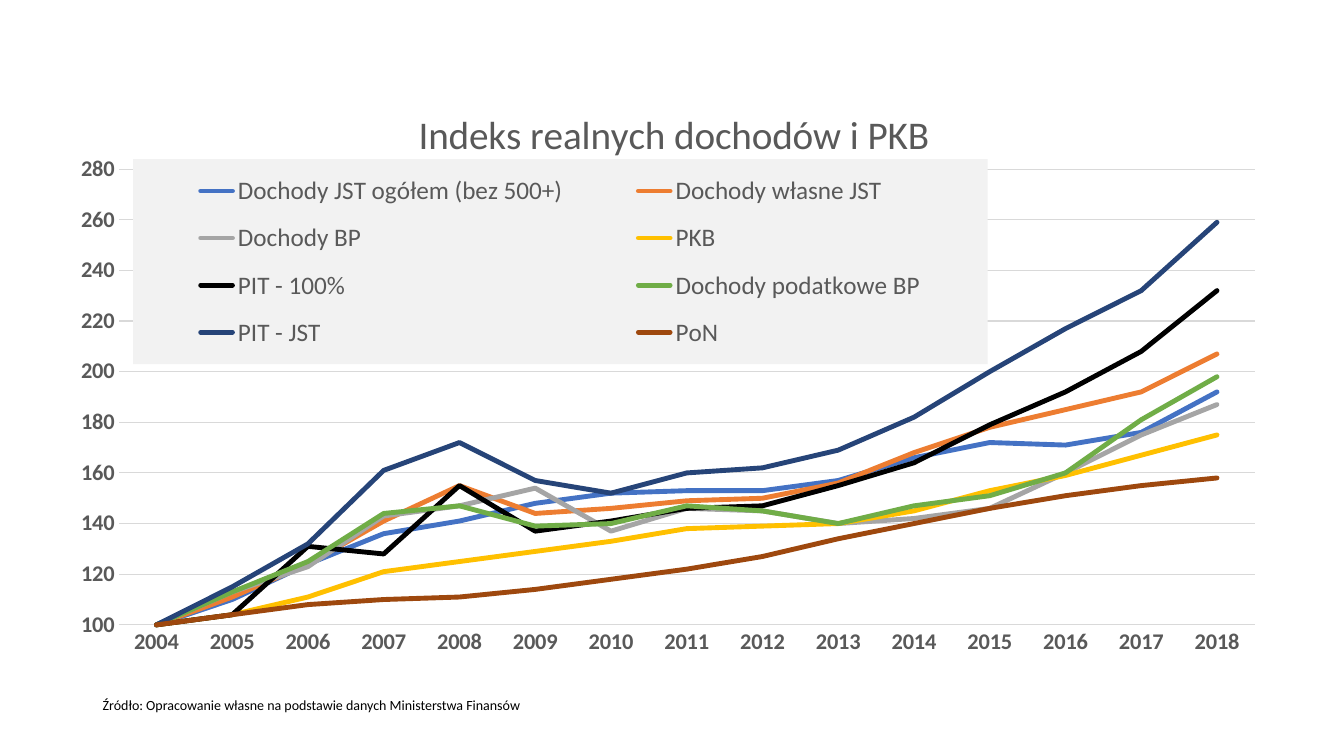
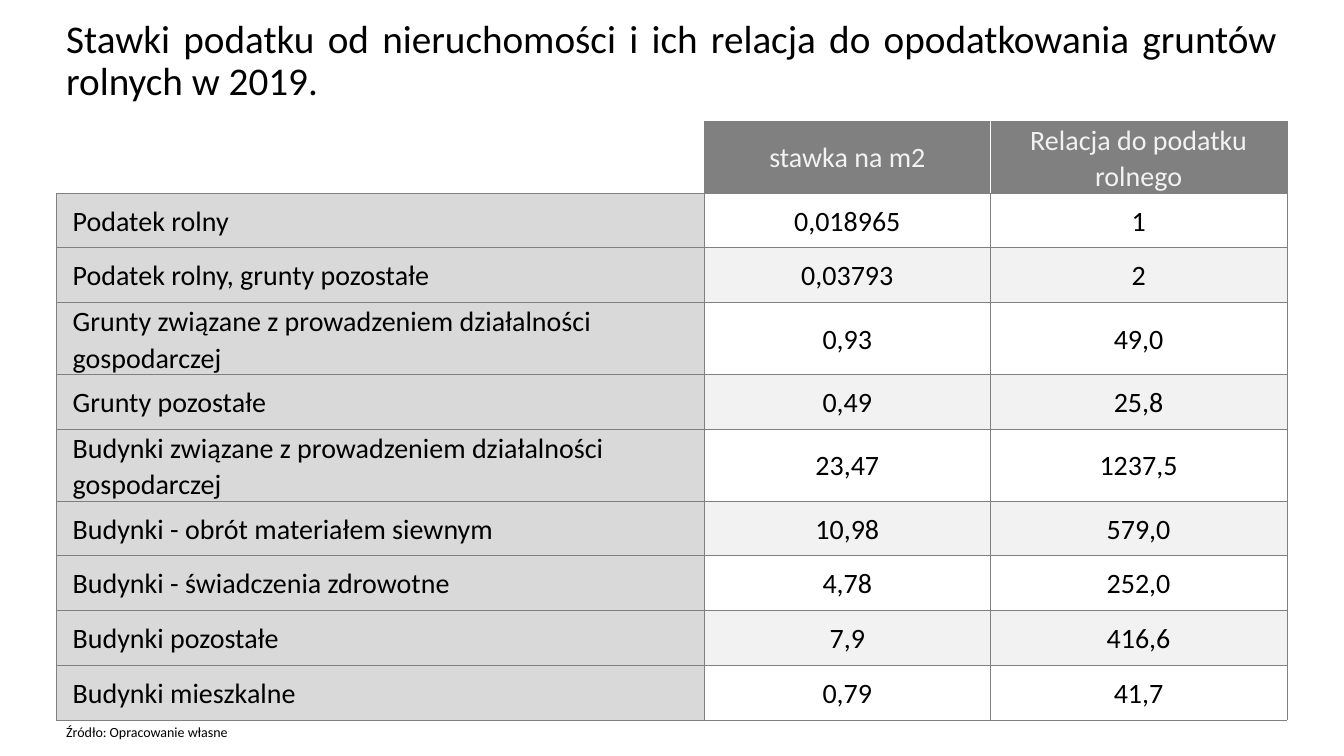
import lxml.etree
import pptx
import pptx.chart.data
import pptx.dml.color
import pptx.enum.chart
import pptx.enum.text
import pptx.oxml
import pptx.oxml.ns
import pptx.util

Cm = pptx.util.Cm
Pt = pptx.util.Pt
RGBColor = pptx.dml.color.RGBColor
PP_ALIGN = pptx.enum.text.PP_ALIGN
qn = pptx.oxml.ns.qn

# Shared style
FONT = "Calibri"
BLACK = RGBColor(0x00, 0x00, 0x00)
WHITE = RGBColor(0xFF, 0xFF, 0xFF)
TEXT_GREY = RGBColor(0x59, 0x59, 0x59)
DARK_GREY = RGBColor(0x80, 0x80, 0x80)
MID_GREY = RGBColor(0xD9, 0xD9, 0xD9)
LIGHT_GREY = RGBColor(0xF2, 0xF2, 0xF2)
BLUE = RGBColor(0x44, 0x72, 0xC4)
ORANGE = RGBColor(0xED, 0x7D, 0x31)
SILVER = RGBColor(0xA5, 0xA5, 0xA5)
YELLOW = RGBColor(0xFF, 0xC0, 0x00)
GREEN = RGBColor(0x70, 0xAD, 0x47)
NAVY = RGBColor(0x26, 0x44, 0x78)
BROWN = RGBColor(0x9E, 0x48, 0x0E)
TITLE_SIZE = Pt(28)
SOURCE_SIZE = Pt(10)


def add_text(slide, text, left, top, width, height, size):
    box = slide.shapes.add_textbox(Cm(left), Cm(top), Cm(width), Cm(height))
    box.text_frame.word_wrap = True
    box.text_frame.auto_size = pptx.enum.text.MSO_AUTO_SIZE.SHAPE_TO_FIT_TEXT
    paragraph = box.text_frame.paragraphs[0]
    paragraph.text = text
    style_font(paragraph.runs[0].font, size, BLACK)
    return paragraph


def style_font(font, size, color, bold=False):
    font.name = FONT
    font.size = size
    font.bold = bold
    font.color.rgb = color


presentation = pptx.Presentation()
presentation.slide_width = Cm(33.87)
presentation.slide_height = Cm(19.05)
blank_layout = presentation.slide_layouts[6]

# Slide 1: line chart of income and GDP indices
slide = presentation.slides.add_slide(blank_layout)
index_series = [
    ("Dochody JST ogółem (bez 500+)", BLUE,
     [100, 110, 124, 136, 141, 148, 152, 153, 153, 157, 166, 172, 171, 176, 192]),
    ("Dochody własne JST", ORANGE,
     [100, 111, 124, 141, 155, 144, 146, 149, 150, 156, 168, 178, 185, 192, 207]),
    ("Dochody BP", SILVER,
     [100, 113, 123, 143, 147, 154, 137, 146, 145, 140, 142, 146, 160, 175, 187]),
    ("PKB", YELLOW,
     [100, 104, 111, 121, 125, 129, 133, 138, 139, 140, 145, 153, 159, 167, 175]),
    ("PIT - 100%", BLACK,
     [100, 104, 131, 128, 155, 137, 141, 146, 147, 155, 164, 179, 192, 208, 232]),
    ("Dochody podatkowe BP", GREEN,
     [100, 113, 125, 144, 147, 139, 140, 147, 145, 140, 147, 151, 160, 181, 198]),
    ("PIT - JST", NAVY,
     [100, 115, 132, 161, 172, 157, 152, 160, 162, 169, 182, 200, 217, 232, 259]),
    ("PoN", BROWN,
     [100, 104, 108, 110, 111, 114, 118, 122, 127, 134, 140, 146, 151, 155, 158]),
]
chart_data = pptx.chart.data.CategoryChartData(number_format="0")
chart_data.categories = [str(year) for year in range(2004, 2019)]
for name, color, values in index_series:
    chart_data.add_series(name, values)
chart = slide.shapes.add_chart(
    pptx.enum.chart.XL_CHART_TYPE.LINE,
    Cm(1.45), Cm(1.93), Cm(30.76), Cm(15.65), chart_data).chart
style_font(chart.font, Pt(10), BLACK)

# Series lines
chart.plots[0].vary_by_categories = False
for series, (name, color, values) in zip(chart.plots[0].series, index_series):
    series.smooth = False
    series.format.line.color.rgb = color
    series.format.line.width = Pt(3.5)
    series.format.line.fill.solid()
    series.format.line.color.rgb = color
    for line in series._element.iter(qn("a:ln")):
        line.set("cap", "rnd")

# Axes
for axis in (chart.category_axis, chart.value_axis):
    axis.major_tick_mark = pptx.enum.chart.XL_TICK_MARK.NONE
    axis.minor_tick_mark = pptx.enum.chart.XL_TICK_MARK.NONE
    style_font(axis.tick_labels.font, Pt(16), TEXT_GREY, bold=True)
value_axis = chart.value_axis
value_axis.minimum_scale, value_axis.maximum_scale = 100, 280
value_axis.major_unit = 20
value_axis.tick_labels.number_format = "0"
value_axis.tick_labels.number_format_is_linked = False
value_axis.format.line.fill.background()
for line_format in (chart.category_axis.format.line,
                    value_axis.major_gridlines.format.line):
    line_format.color.rgb = MID_GREY
    line_format.width = Pt(0.75)

# Chart title and legend
chart.has_title = True
title_paragraph = chart.chart_title.text_frame.paragraphs[0]
title_paragraph.text = "Indeks realnych dochodów i PKB"
style_font(title_paragraph.runs[0].font, TITLE_SIZE, TEXT_GREY)
chart.has_legend = True
legend = chart.legend
legend.position = pptx.enum.chart.XL_LEGEND_POSITION.BOTTOM
legend.include_in_layout = True
style_font(legend.font, Pt(18), TEXT_GREY)
legend_fill = pptx.oxml.parse_xml(
    f'<c:spPr {pptx.oxml.ns.nsdecls("c", "a")}><a:solidFill>'
    f'<a:srgbClr val="{LIGHT_GREY}"/></a:solidFill></c:spPr>')
legend._element.find(qn("c:txPr")).addprevious(legend_fill)

# Manual layout of chart parts, as fractions of the chart area
plot_area = chart._chartSpace.chart.plotArea
for part, index, settings in (
        (plot_area, 0, {"layoutTarget": "inner", "xMode": "edge", "yMode": "edge",
                        "x": 0.05, "y": 0.149, "w": 0.931, "h": 0.734}),
        (chart.chart_title._element, 1,
         {"xMode": "edge", "yMode": "edge", "x": 0.29, "y": 0.04}),
        (legend._element, 1, {"xMode": "edge", "yMode": "edge",
                              "x": 0.062, "y": 0.133, "w": 0.7, "h": 0.33})):
    for old_layout in part.findall(qn("c:layout")):
        part.remove(old_layout)
    layout = lxml.etree.Element(qn("c:layout"))
    manual_layout = lxml.etree.SubElement(layout, qn("c:manualLayout"))
    for key, value in settings.items():
        lxml.etree.SubElement(manual_layout, qn(f"c:{key}")).set("val", str(value))
    part.insert(index, layout)

add_text(slide, "Źródło: Opracowanie własne na podstawie danych Ministerstwa Finansów",
         2.34, 17.42, 25.15, 0.69, SOURCE_SIZE)

# Slide 2: table of property tax rates
slide = presentation.slides.add_slide(blank_layout)
title = add_text(
    slide,
    "Stawki podatku od nieruchomości i ich relacja do opodatkowania gruntów rolnych w 2019.",
    1.42, 0.36, 31.01, 3.84, TITLE_SIZE)
title.alignment = PP_ALIGN.JUSTIFY
title.line_spacing = 0.9

tax_rows = [
    ("", "stawka na m2", "Relacja do podatku rolnego"),
    ("Podatek rolny", "0,018965", "1"),
    ("Podatek rolny, grunty pozostałe", "0,03793", "2"),
    ("Grunty związane z prowadzeniem działalności gospodarczej", "0,93", "49,0"),
    ("Grunty pozostałe", "0,49", "25,8"),
    ("Budynki związane z prowadzeniem działalności gospodarczej", "23,47", "1237,5"),
    ("Budynki - obrót materiałem siewnym", "10,98", "579,0"),
    ("Budynki - świadczenia zdrowotne", "4,78", "252,0"),
    ("Budynki pozostałe", "7,9", "416,6"),
    ("Budynki mieszkalne", "0,79", "41,7"),
]
TALL_ROWS = (0, 3, 5)
table = slide.shapes.add_table(
    len(tax_rows), 3, Cm(1.42), Cm(3.05), Cm(31.01), Cm(15.01)).table
table.first_row = False
table.horz_banding = False
for column, width in zip(table.columns, (16.33, 7.21, 7.47)):
    column.width = Cm(width)

for row_index, texts in enumerate(tax_rows):
    table.rows[row_index].height = Cm(1.81 if row_index in TALL_ROWS else 1.38)
    for column_index, text in enumerate(texts):
        cell = table.cell(row_index, column_index)
        is_header = row_index == 0
        is_label = column_index == 0
        is_corner = is_header and is_label

        # Text
        cell.vertical_anchor = pptx.enum.text.MSO_ANCHOR.MIDDLE
        cell.margin_left = Cm(0.41 if is_label else 0.13)
        cell.margin_right = Cm(0.13)
        cell.margin_top = cell.margin_bottom = 0
        paragraph = cell.text_frame.paragraphs[0]
        paragraph.text = text
        paragraph.alignment = PP_ALIGN.LEFT if is_label else PP_ALIGN.CENTER
        paragraph.line_spacing = 1.07
        for run in paragraph.runs:
            style_font(run.font, Pt(20), LIGHT_GREY if is_header else BLACK)

        # Fill
        if is_corner:
            cell.fill.background()
        else:
            cell.fill.solid()
            if is_header:
                cell.fill.fore_color.rgb = DARK_GREY
            elif is_label:
                cell.fill.fore_color.rgb = MID_GREY
            else:
                cell.fill.fore_color.rgb = WHITE if row_index % 2 else LIGHT_GREY

        # Borders
        borders = dict.fromkeys("LRTB", DARK_GREY)
        if is_corner:
            borders["L"] = borders["T"] = None
        elif is_header:
            borders["R" if column_index == 1 else "L"] = WHITE
        cell_properties = cell._tc.get_or_add_tcPr()
        for position, (side, color) in enumerate(borders.items()):
            border = lxml.etree.Element(qn(f"a:ln{side}"), w=str(Pt(0.5)))
            if color is None:
                lxml.etree.SubElement(border, qn("a:noFill"))
            else:
                fill = lxml.etree.SubElement(border, qn("a:solidFill"))
                lxml.etree.SubElement(fill, qn("a:srgbClr")).set("val", str(color))
            cell_properties.insert(position, border)

add_text(slide, "Źródło: Opracowanie własne", 1.42, 18.11, 4.85, 0.69, SOURCE_SIZE)

presentation.save("out.pptx")
